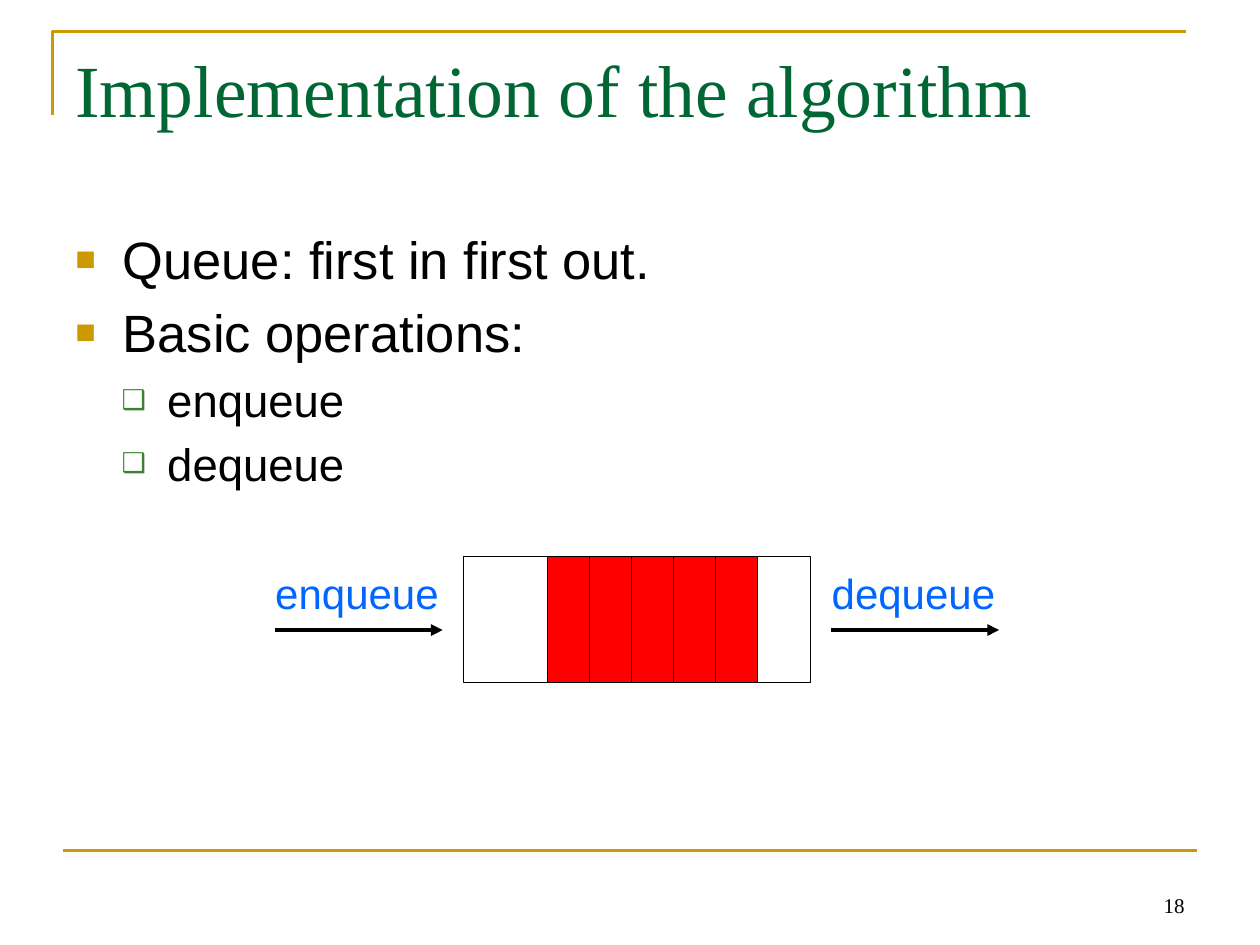
from dataclasses import dataclass

from lxml.etree import SubElement
from pptx import Presentation
from pptx.dml.color import RGBColor as RGB
from pptx.enum.shapes import MSO_CONNECTOR as Conn, MSO_SHAPE as Shape
from pptx.enum.text import MSO_ANCHOR as Anchor, PP_ALIGN as Align
from pptx.oxml.ns import qn
from pptx.util import Pt


@dataclass(frozen=True)
class Theme:
    serif: str = "Times New Roman"
    sans: str = "Arial"
    gold: str = "CC9900"
    title: str = "006633"
    leaf: str = "3B812F"
    label: str = "0066FF"
    black: str = "000000"
    white: str = "FFFFFF"
    red: str = "FF0000"
    title_size: float = 42
    body_size: float = 30
    sub_size: float = 26
    label_size: float = 24
    number_size: float = 12


T = Theme()


def add_text(p, text, *, size, color=T.black, font=T.sans, align=Align.LEFT):
    p.alignment = align
    r = p.add_run()
    r.text = text
    r.font.size = Pt(size)
    r.font.name = font
    r.font.color.rgb = RGB.from_string(color)


def add_box(s, x, y, w, h, wrap=True, anchor=Anchor.TOP):
    tf = s.shapes.add_textbox(Pt(x), Pt(y), Pt(w), Pt(h)).text_frame
    tf.word_wrap = wrap
    tf.vertical_anchor = anchor
    return tf


def set_bullet(p, char, color, percent, left, hanging):
    pPr = p._p.get_or_add_pPr()
    pPr.set("marL", str(Pt(left)))
    pPr.set("indent", str(-Pt(hanging)))
    clr = SubElement(pPr, qn("a:buClr"))
    SubElement(clr, qn("a:srgbClr"), val=color)
    SubElement(pPr, qn("a:buSzPct"), val=str(percent * 1000))
    SubElement(pPr, qn("a:buFont"), typeface=T.sans)
    SubElement(pPr, qn("a:buChar"), char=char)


def add_bullets(tf, items):
    for i, (text, level) in enumerate(items):
        p = tf.paragraphs[0] if i == 0 else tf.add_paragraph()
        p.level = level
        size = T.sub_size if level else T.body_size
        p.space_before = Pt(size * 0.2)
        if level:
            set_bullet(p, "❑", T.leaf, 60, 52.5, 26)
        else:
            set_bullet(p, "■", T.gold, 65, 27, 27)
        add_text(p, text, size=size)


def add_rect(s, x, y, w, h, fill):
    sp = s.shapes.add_shape(Shape.RECTANGLE, Pt(x), Pt(y), Pt(w), Pt(h))
    sp.shadow.inherit = False
    sp.fill.solid()
    sp.fill.fore_color.rgb = RGB.from_string(fill)
    sp.line.color.rgb = RGB.from_string(T.black)
    sp.line.width = Pt(0.75)


def add_line(s, x1, x2, y, color, width, arrow=False):
    cxn = s.shapes.add_connector(Conn.STRAIGHT, Pt(x1), Pt(y), Pt(x2), Pt(y))
    cxn.line.color.rgb = RGB.from_string(color)
    cxn.line.width = Pt(width)
    if arrow:
        SubElement(cxn.line._get_or_add_ln(), qn("a:tailEnd"), type="triangle")
    SubElement(cxn._element.spPr, qn("a:effectLst"))


def add_corner(s, left, top, right, bottom):
    fb = s.shapes.build_freeform(Pt(left), Pt(bottom))
    fb.add_line_segments([(Pt(left), Pt(top)), (Pt(right), Pt(top))], close=False)
    sp = fb.convert_to_shape()
    sp.shadow.inherit = False
    sp.fill.background()
    sp.line.color.rgb = RGB.from_string(T.gold)
    sp.line.width = Pt(1.5)


def add_operation(s, text, x):
    tf = add_box(s, x - 7, 321, 108, 36, wrap=False)
    add_text(tf.paragraphs[0], text, size=T.label_size, color=T.label,
             align=Align.CENTER)
    add_line(s, x, x + 96, 360, T.black, 2.25, arrow=True)


def add_queue(s):
    top, height, cell = 318, 72, 24
    add_rect(s, 265, top, 198, height, T.white)
    for i in range(5):
        add_rect(s, 313 + i * cell, top, cell, height, T.red)


def main():
    prs = Presentation()
    prs.slide_width, prs.slide_height = Pt(720), Pt(540)
    s = prs.slides.add_slide(prs.slide_layouts[6])

    add_corner(s, 30, 18, 678, 66)
    add_line(s, 36, 684, 486, T.gold, 1.5)

    title = add_box(s, 36, 21.5, 648, 90)
    add_text(title.paragraphs[0], "Implementation of the algorithm",
             size=T.title_size, color=T.title, font=T.serif)

    add_bullets(add_box(s, 36, 126, 648, 356), [
        ("Queue: first in first out.", 0),
        ("Basic operations:", 0),
        ("enqueue", 1),
        ("dequeue", 1),
    ])

    add_queue(s)
    add_operation(s, "enqueue", 157)
    add_operation(s, "dequeue", 475)

    number = add_box(s, 516, 492, 168, 36, anchor=Anchor.BOTTOM)
    add_text(number.paragraphs[0], "18", size=T.number_size, font=T.serif,
             align=Align.RIGHT)

    prs.save("out.pptx")


if __name__ == "__main__":
    main()
